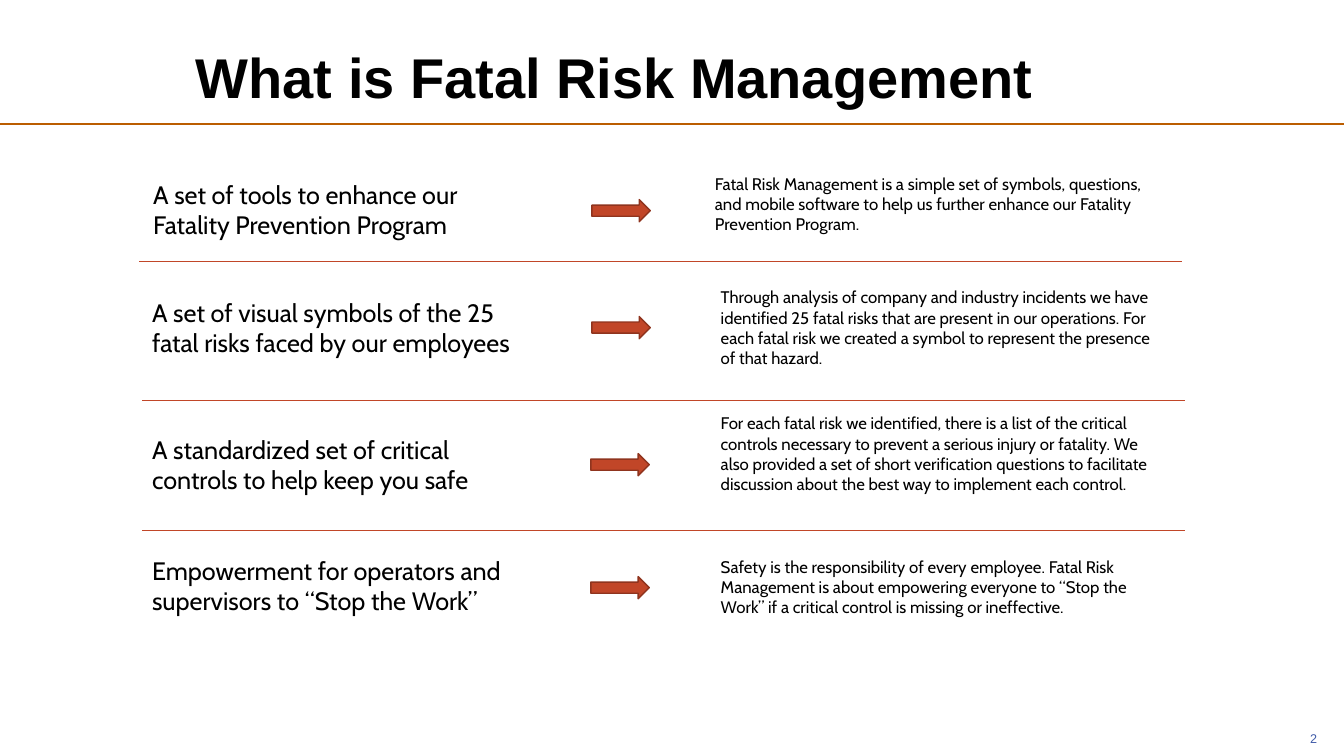
from dataclasses import dataclass

from lxml import etree
from pptx import Presentation
from pptx.dml.color import RGBColor
from pptx.enum.shapes import MSO_CONNECTOR, MSO_SHAPE
from pptx.enum.text import MSO_ANCHOR, PP_ALIGN
from pptx.oxml.ns import qn
from pptx.util import Inches, Pt

STRAIGHT = MSO_CONNECTOR.STRAIGHT
RIGHT_ARROW = MSO_SHAPE.RIGHT_ARROW
LEFT, CENTER = PP_ALIGN.LEFT, PP_ALIGN.CENTER
TOP, BOTTOM = MSO_ANCHOR.TOP, MSO_ANCHOR.BOTTOM

BLACK, ORANGE, RUST, DARK_RUST, BLUE = "000000", "BB5D00", "C14628", "8F341E", "3F5AA8"
DETAIL_LEFT, DETAIL_WIDTH = 7.05, 4.61
ARROW_WIDTH, ARROW_HEIGHT = 0.58, 0.22
DIVIDER_WIDTH = 10.34


@dataclass
class Box:
    left: float
    top: float
    width: float
    height: float


@dataclass
class Style:
    size: float
    font: str = "Cabin"
    color: str = BLACK
    bold: bool = False
    align: PP_ALIGN = LEFT
    anchor: MSO_ANCHOR = TOP
    line_spacing: float = 1.0
    side_inset: float = 0.1
    end_inset: float = 0.05


@dataclass
class Element:
    headline: str
    headline_box: Box
    arrow_left: float
    arrow_top: float
    detail: str
    detail_top: float
    detail_height: float
    detail_style: Style


@dataclass
class Divider:
    left: float
    top: float


HEADLINE = Style(18)
DETAIL = Style(12)
TIGHT_DETAIL = Style(12, side_inset=0.04, end_inset=0.04)
TITLE = Style(40, "Arial", bold=True, align=CENTER, anchor=BOTTOM, line_spacing=0.85)
PAGE_NUMBER = Style(9, "Arial", BLUE, align=CENTER)

ELEMENTS = [
    Element("A set of tools to enhance our Fatality Prevention Program",
            Box(1.42, 1.73, 3.8, 0.71), 5.87, 1.98,
            "Fatal Risk Management is a simple set of symbols, questions, and mobile "
            "software to help us further enhance our Fatality Prevention Program.",
            1.68, 0.8, TIGHT_DETAIL),
    Element("A set of visual symbols of the 25 fatal risks faced by our employees",
            Box(1.41, 2.9, 3.96, 0.71), 5.87, 3.14,
            "Through analysis of company and industry incidents we have identified 25 "
            "fatal risks that are present in our operations. For each fatal risk we "
            "created a symbol to represent the presence of that hazard.",
            2.8, 0.91, DETAIL),
    Element("A standardized set of critical controls to help keep you safe",
            Box(1.41, 4.26, 3.86, 0.71), 5.86, 4.5,
            "For each fatal risk we identified, there is a list of the critical controls "
            "necessary to prevent a serious injury or fatality. We also provided a set of "
            "short verification questions to facilitate discussion about the best way to "
            "implement each control.",
            4.05, 1.11, DETAIL),
    Element("Empowerment for operators and supervisors to “Stop the Work”",
            Box(1.41, 5.46, 3.84, 0.71), 5.86, 5.72,
            "Safety is the responsibility of every employee. Fatal Risk Management is "
            "about empowering everyone to “Stop the Work” if a critical control is "
            "missing or ineffective.",
            5.47, 0.71, DETAIL),
]
DIVIDERS = [Divider(1.38, 2.59), Divider(1.41, 3.97), Divider(1.41, 5.26)]


def rgb(color: str) -> RGBColor:
    return RGBColor.from_string(color)


def add_text(slide, text: str, box: Box, style: Style) -> None:
    frame = slide.shapes.add_textbox(Inches(box.left), Inches(box.top),
                                     Inches(box.width), Inches(box.height)).text_frame
    frame.word_wrap = True
    frame.vertical_anchor = style.anchor
    frame.margin_left = frame.margin_right = Inches(style.side_inset)
    frame.margin_top = frame.margin_bottom = Inches(style.end_inset)
    frame.text = text
    paragraph = frame.paragraphs[0]
    paragraph.alignment = style.align
    paragraph.line_spacing = style.line_spacing
    font = paragraph.runs[0].font
    font.name, font.size, font.bold = style.font, Pt(style.size), style.bold
    font.color.rgb = rgb(style.color)


def add_rule(slide, left: float, top: float, width: float, color: str, weight: float) -> None:
    rule = slide.shapes.add_connector(STRAIGHT, Inches(left), Inches(top),
                                      Inches(left + width), Inches(top))
    rule.line.color.rgb = rgb(color)
    rule.line.width = Pt(weight)
    etree.SubElement(rule._element.spPr, qn("a:effectLst"))


def add_arrow(slide, left: float, top: float) -> None:
    arrow = slide.shapes.add_shape(RIGHT_ARROW, Inches(left), Inches(top),
                                   Inches(ARROW_WIDTH), Inches(ARROW_HEIGHT))
    arrow.shadow.inherit = False
    arrow.fill.solid()
    arrow.fill.fore_color.rgb = rgb(RUST)
    arrow.line.color.rgb = rgb(DARK_RUST)
    arrow.line.width = Pt(1)


def main() -> None:
    deck = Presentation()
    deck.slide_width, deck.slide_height = Inches(13.33), Inches(7.5)
    slide = deck.slides.add_slide(deck.slide_layouts[6])

    # Title, rule below it and page number
    add_rule(slide, 0, 1.23, 13.33, ORANGE, 2)
    add_text(slide, "2", Box(12.76, 7.2, 0.54, 0.29), PAGE_NUMBER)
    add_text(slide, "What is Fatal Risk Management", Box(0.89, 0.41, 10.4, 0.73), TITLE)

    # Headline, arrow and detail of each element
    for element in ELEMENTS:
        add_text(slide, element.headline, element.headline_box, HEADLINE)
        add_arrow(slide, element.arrow_left, element.arrow_top)
        detail_box = Box(DETAIL_LEFT, element.detail_top, DETAIL_WIDTH, element.detail_height)
        add_text(slide, element.detail, detail_box, element.detail_style)

    # Dividers between the elements
    for divider in DIVIDERS:
        add_rule(slide, divider.left, divider.top, DIVIDER_WIDTH, RUST, 0.5)

    deck.save("out.pptx")


if __name__ == "__main__":
    main()
